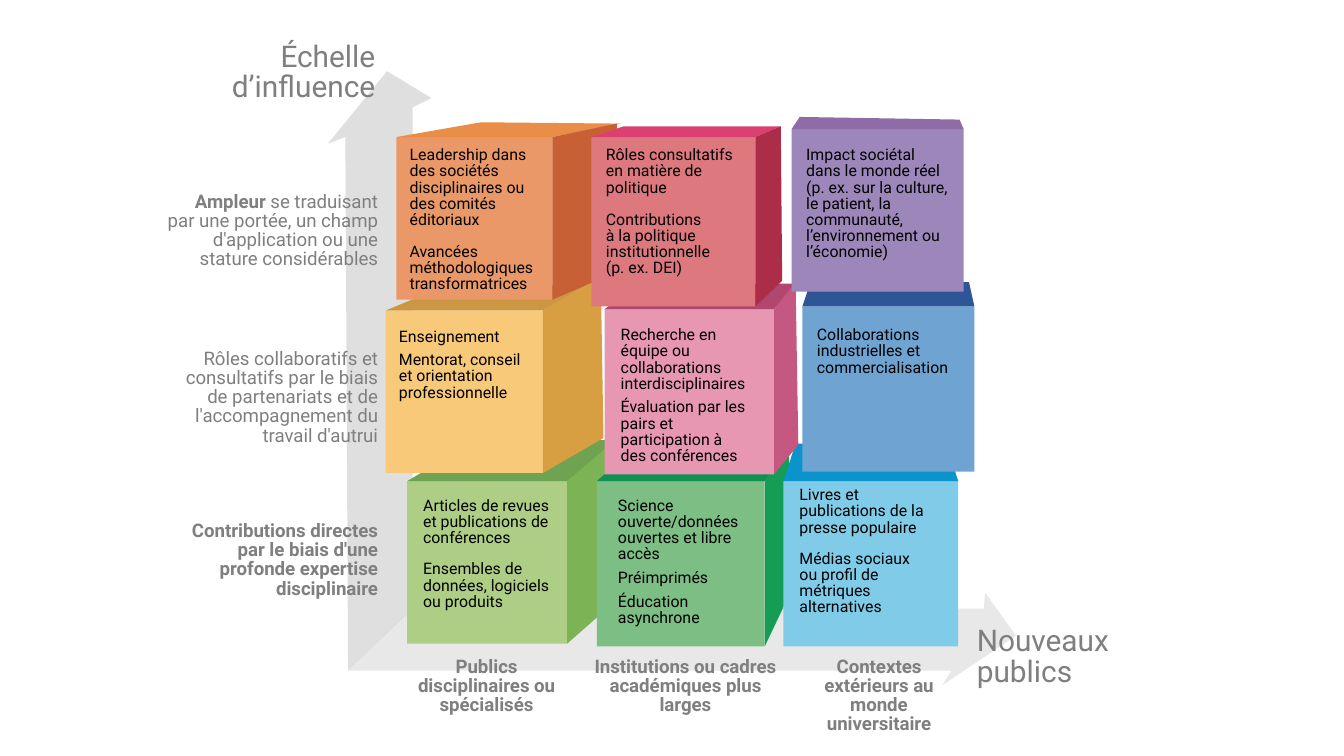
from lxml import etree
from pptx import Presentation
from pptx.dml.color import RGBColor
from pptx.enum.shapes import MSO_SHAPE
from pptx.enum.text import PP_ALIGN
from pptx.oxml.ns import qn
from pptx.util import Inches, Pt

RECT = MSO_SHAPE.RECTANGLE
LEFT, CENTER, RIGHT = PP_ALIGN.LEFT, PP_ALIGN.CENTER, PP_ALIGN.RIGHT

THEME = {
    "font": "Roboto", "spacing": 0.85,
    "axis_size": 16, "label_size": 10, "cube_size": 8.5,
    "label": "7F7F7F", "ink": "000000", "arrow": "D9D9D9",
    "cubes": {
        "orange": ("EA9868", "E98D47", "C76135"),
        "red": ("DD797E", "DA4070", "AB2D48"),
        "purple": ("9D87BA", "8D6CA8", None),
        "yellow": ("F7C979", "CC9742", "D89F42"),
        "pink": ("E897B3", "B1466F", "C45881"),
        "blue": ("6EA3D2", "2E5696", None),
        "lime": ("AFCE85", "6FA351", "7CB354"),
        "green": ("7CBE84", "119052", "159D56"),
        "sky": ("80CCE8", "0B93CB", None),
    },
}

COLS = (2.95, 4.45, 5.9)
ROWS = (1.02, 2.3, 3.58)

ARROWS = [
    (84, [(2.44, 1.07), (2.88, 0.53), (3.21, 0.73), (3.07, 0.8),
          (3.07, 4.53), (2.59, 4.99), (2.57, 1.02)]),
    (60, [(7.01, 5.1), (7.56, 4.73), (7.33, 4.41), (7.32, 4.53),
          (3.07, 4.52), (2.59, 4.99), (7.08, 4.99)]),
]
AXES = [
    ((7.17, 4.62), LEFT, "Nouveaux publics"),
    ((1.54, 0.27), RIGHT, "Échelle d’influence"),
]
ROW_LABELS = [
    (1.39, [("Ampleur", True),
            (" se traduisant par une portée, un champ d'application ou une stature considérables", False)]),
    (2.56, [("Rôles collaboratifs et consultatifs par le biais de partenariats "
             "et de l'accompagnement du travail d'autrui", False)]),
    (3.84, [("Contributions directes par le biais d'une profonde expertise disciplinaire", True)]),
]
COL_LABELS = [
    (2.89, 1.46, "Publics disciplinaires ou spécialisés"),
    (4.28, 1.64, "Institutions ou cadres académiques plus larges"),
    (5.93, 1.22, "Contextes extérieurs au monde universitaire"),
]

# name, column, row, front (dx, dy, w, h), top depth (left, right),
# side depth (top, bottom), text (dx, dy, w), paragraphs (space before, text)
CUBES = [
    ("lime", 0, 2, (0.08, 0, 1.19, 1.21), ((0.47, -0.28), (0.42, -0.31)),
     ((0.34, -0.29), (0.34, -0.3)), (0.02, 0.08, 1.15),
     [(0, "Articles de revues et publications de conférences"),
      (8, "Ensembles de données, logiciels ou produits")]),
    ("green", 1, 2, (-0.01, 0, 1.25, 1.23), ((0.3, -0.26), (0.2, -0.26)),
     ((0.18, -0.28), (0.19, -0.4)), (0.06, 0.08, 1.1),
     [(0, "Science ouverte/données ouvertes et libre accès"),
      (4, "Préimprimés"), (4, "Éducation asynchrone")]),
    ("sky", 2, 2, (-0.07, 0, 1.3, 1.23), ((0.09, -0.28), (-0.09, -0.28)),
     None, (0.02, 0, 1.18),
     [(0, "Livres et publications de la presse populaire"),
      (8, "Médias sociaux ou profil de métriques alternatives")]),
    ("yellow", 0, 1, (-0.08, 0.01, 1.17, 1.21), ((0.46, -0.19), (0.38, -0.19)),
     ((0.43, -0.25), (0.45, -0.26)), (0, 0.09, 1.13),
     [(0, "Enseignement"),
      (4, "Mentorat, conseil et orientation professionnelle")]),
    ("pink", 1, 1, (0.05, 0, 1.26, 1.23), ((0.25, -0.19), (0.17, -0.19)),
     ((0.16, -0.2), (0.18, -0.22)), (0.02, 0.09, 1.15),
     [(0, "Recherche en équipe ou collaborations interdisciplinaires"),
      (4, "Évaluation par les pairs et participation à des conférences")]),
    ("blue", 2, 1, (0.07, -0.02, 1.28, 1.23), ((0.06, -0.18), (-0.04, -0.18)),
     None, (0.01, 0.11, 1.28),
     [(0, "Collaborations industrielles et commercialisation")]),
    ("orange", 0, 0, (0, 0, 1.16, 1.21), ((0.63, -0.11), (0.51, -0.1)),
     ((0.48, -0.1), (0.51, -0.22)), (0, 0.03, 1.13),
     [(0, "Leadership dans des sociétés disciplinaires ou des comités éditoriaux"),
      (8.5, "Avancées méthodologiques transformatrices")]),
    ("red", 1, 0, (-0.05, 0, 1.22, 1.26), ((0.24, -0.08), (0.19, -0.08)),
     ((0.19, -0.08), (0.2, -0.19)), (0.01, 0.03, 1.21),
     [(0, "Rôles consultatifs en matière de politique"),
      (8.5, "Contributions\nà la politique institutionnelle\n(p. ex. DEI)")]),
    ("purple", 2, 0, (-0.01, -0.06, 1.28, 1.21), ((0.06, -0.09), (-0.03, -0.07)),
     None, (0.01, 0.09, 1.28),
     [(0, "Impact sociétal dans le monde réel (p. ex. sur la culture, le patient, "
          "la communauté, l’environnement ou l’économie)")]),
]


def paint(sp, color):
    sp.shadow.inherit = False
    sp.fill.solid()
    sp.fill.fore_color.rgb = RGBColor.from_string(color)
    sp.line.fill.background()


def add_polygon(shapes, points, color):
    pts = [(Inches(x), Inches(y)) for x, y in points]
    builder = shapes.build_freeform(*pts[0], scale=1.0)
    builder.add_line_segments(pts[1:], close=True)
    sp = builder.convert_to_shape()
    paint(sp, color)
    return sp


def add_text(shapes, box, paragraphs, size, color, align=LEFT):
    tf = shapes.add_textbox(*map(Inches, box)).text_frame
    tf.word_wrap = True
    for i, (before, runs) in enumerate(paragraphs):
        p = tf.paragraphs[0] if i == 0 else tf.add_paragraph()
        p.alignment = align
        p.line_spacing = THEME["spacing"]
        p.space_before = Pt(before)
        p.font.name = THEME["font"]
        p.font.size = Pt(size)
        p.font.color.rgb = RGBColor.from_string(color)
        if isinstance(runs, str):
            p.text = runs
            continue
        for text, bold in runs:
            r = p.add_run()
            r.text = text
            r.font.bold = bold


def shift(x, y, depth):
    return x + depth[0], y + depth[1]


def add_cube(shapes, name, col, row, front, top, side, text, paragraphs):
    dx, dy, w, h = front
    x, y = COLS[col] + dx, ROWS[row] + dy
    right, bottom = x + w, y + h
    front_color, top_color, side_color = THEME["cubes"][name]
    group = shapes.add_group_shape().shapes
    paint(group.add_shape(RECT, *map(Inches, (x, y, w, h))), front_color)
    add_polygon(group, [(x, y), (right, y), shift(right, y, top[1]),
                        shift(x, y, top[0])], top_color)
    if side:
        add_polygon(group, [(right, y), (right, bottom), shift(right, bottom, side[1]),
                            shift(right, y, side[0])], side_color)
    add_text(shapes, (x + text[0], y + text[1], text[2], 0.57), paragraphs,
             THEME["cube_size"], THEME["ink"])


def main():
    prs = Presentation()
    prs.slide_width = Inches(10)
    prs.slide_height = prs.slide_width * 9 // 16
    shapes = prs.slides.add_slide(prs.slide_layouts[6]).shapes

    group = shapes.add_group_shape().shapes
    for opacity, points in ARROWS:
        sp = add_polygon(group, points, THEME["arrow"])
        clr = sp.element.spPr.find(qn("a:solidFill"))[0]
        etree.SubElement(clr, qn("a:alpha"), val=str(opacity * 1000))

    for cube in CUBES:
        add_cube(shapes, *cube)

    for (x, y), align, text in AXES:
        add_text(shapes, (x, y, 1.35, 0.56), [(0, text)],
                 THEME["axis_size"], THEME["label"], align)
    for y, runs in ROW_LABELS:
        add_text(shapes, (1.12, y, 1.79, 0.57), [(0, runs)],
                 THEME["label_size"], THEME["label"], RIGHT)
    for x, w, text in COL_LABELS:
        add_text(shapes, (x, 4.85, w, 0.57), [(0, [(text, True)])],
                 THEME["label_size"], THEME["label"], CENTER)

    prs.save("out.pptx")


if __name__ == "__main__":
    main()
